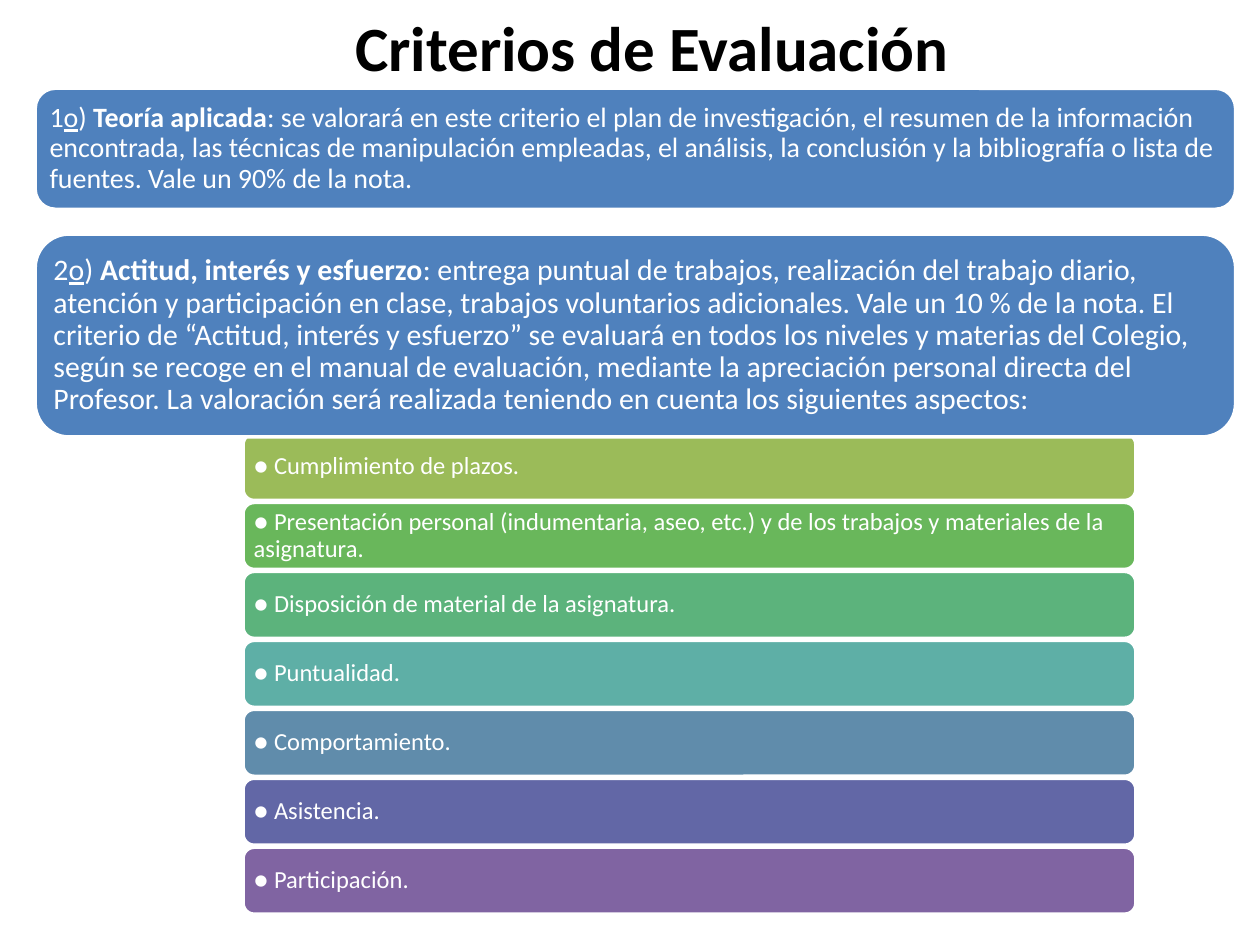
import pptx
import pptx.util
import pptx.dml.color
import pptx.enum.shapes
import pptx.enum.text

Cm, Pt = pptx.util.Cm, pptx.util.Pt
RGBColor = pptx.dml.color.RGBColor

BLACK = RGBColor(0x00, 0x00, 0x00)
WHITE = RGBColor(0xFF, 0xFF, 0xFF)
BLUE = RGBColor(0x4F, 0x81, 0xBD)
OLIVE = RGBColor(0x9B, 0xBB, 0x59)
GREEN = RGBColor(0x69, 0xB7, 0x5B)
EMERALD = RGBColor(0x5C, 0xB3, 0x7C)
TEAL = RGBColor(0x5E, 0xAF, 0xA6)
STEEL = RGBColor(0x60, 0x8C, 0xAB)
INDIGO = RGBColor(0x62, 0x67, 0xA6)
PURPLE = RGBColor(0x80, 0x64, 0xA2)

BOLD = {"bold": True}
UNDERLINE = {"underline": True}


def apply(target, values):
    for name, value in values.items():
        setattr(target, name, value)


class Deck:
    """Style of the deck and its current slide."""

    font = "Calibri"
    line_width = Pt(2)

    def __init__(self, prs):
        self.s = prs.slides.add_slide(prs.slide_layouts[6])

    def add_runs(self, p, runs, size, color):
        for text, extra in runs:
            r = p.add_run()
            r.text = text
            apply(r.font, {"name": self.font, "size": Pt(size), **extra})
            r.font.color.rgb = color

    def title(self, text, left, top, width, height):
        sp = self.s.shapes.add_textbox(Cm(left), Cm(top), Cm(width), Cm(height))
        tf = sp.text_frame
        apply(tf, {"word_wrap": False,
                   "auto_size": pptx.enum.text.MSO_AUTO_SIZE.SHAPE_TO_FIT_TEXT})
        self.add_runs(tf.paragraphs[0], [(text, BOLD)], 36, BLACK)

    def panel(self, runs, left, top, width, height, fill, size, inset):
        sp = self.s.shapes.add_shape(
            pptx.enum.shapes.MSO_SHAPE.ROUNDED_RECTANGLE,
            Cm(left), Cm(top), Cm(width), Cm(height))
        sp.shadow.inherit = False
        sp.fill.solid()
        sp.fill.fore_color.rgb = fill
        sp.line.color.rgb = WHITE
        sp.line.width = self.line_width
        tf = sp.text_frame
        margins = ("margin_left", "margin_top", "margin_right", "margin_bottom")
        apply(tf, {"word_wrap": True,
                   "vertical_anchor": pptx.enum.text.MSO_ANCHOR.MIDDLE,
                   **dict.fromkeys(margins, Cm(inset))})
        p = tf.paragraphs[0]
        apply(p, {"alignment": pptx.enum.text.PP_ALIGN.LEFT, "line_spacing": 0.9})
        self.add_runs(p, runs, size, WHITE)

    def criterion(self, number, name, text, top, height, size):
        runs = [(number, {}), ("o", UNDERLINE), (") ", {}), (name, BOLD), (text, {})]
        self.panel(runs, 0.71, top, 24.2, height, BLUE, size, 0.17)

    def aspects(self, items, left, top, width, height, pitch):
        for i, (text, fill) in enumerate(items):
            self.panel([("● " + text, {})], left, top + i * pitch, width, height,
                       fill, 14, 0.15)


def main():
    prs = pptx.Presentation()
    apply(prs, {"slide_width": Cm(25.4), "slide_height": Cm(19.05)})
    deck = Deck(prs)

    # Aspects, behind the criteria
    deck.aspects([
        ("Cumplimiento de plazos.", OLIVE),
        ("Presentación personal (indumentaria, aseo, etc.) y de los trabajos "
         "y materiales de la asignatura.", GREEN),
        ("Disposición de material de la asignatura.", EMERALD),
        ("Puntualidad.", TEAL),
        ("Comportamiento.", STEEL),
        ("Asistencia.", INDIGO),
        ("Participación.", PURPLE),
    ], left=4.9, top=8.74, width=18, height=1.35, pitch=1.39)

    # Criteria
    deck.criterion(
        "1", "Teoría aplicada",
        ": se valorará en este criterio el plan de investigación, el resumen de la "
        "información encontrada, las técnicas de manipulación empleadas, el análisis, "
        "la conclusión y la bibliografía o lista de fuentes. Vale un 90% de la nota.",
        top=1.78, height=2.44, size=16)
    deck.criterion(
        "2", "Actitud, interés y esfuerzo",
        ": entrega puntual de trabajos, realización del trabajo diario, atención y "
        "participación en clase, trabajos voluntarios adicionales. Vale un 10 % de la "
        "nota. El criterio de “Actitud, interés y esfuerzo” se evaluará en todos los "
        "niveles y materias del Colegio, según se recoge en el manual de evaluación, "
        "mediante la apreciación personal directa del Profesor. La valoración será "
        "realizada teniendo en cuenta los siguientes aspectos:",
        top=4.72, height=4.09, size=17)

    # Title
    deck.title("Criterios de Evaluación", 6.91, 0.05, 12.6, 1.8)

    prs.save("out.pptx")


if __name__ == "__main__":
    main()
